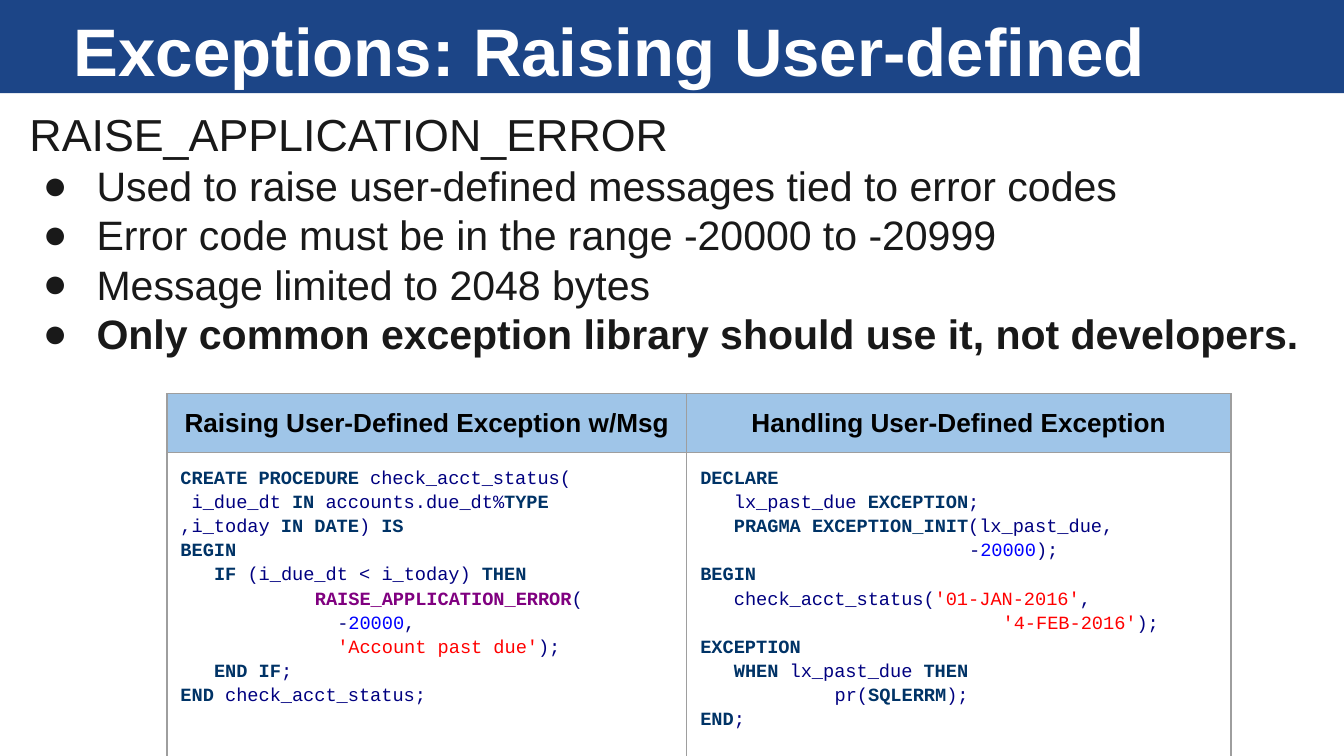
from dataclasses import dataclass

from lxml.etree import SubElement
from pptx import Presentation
from pptx.dml.color import RGBColor
from pptx.enum.shapes import MSO_SHAPE as Shape
from pptx.enum.text import MSO_ANCHOR as Anchor, PP_ALIGN as Align
from pptx.oxml.ns import qn
from pptx.util import Pt


@dataclass(frozen=True)
class Theme:
    sans: str = "Arial"
    mono: str = "Courier New"
    banner: str = "1C4587"
    header: str = "9FC5E8"
    white: str = "FFFFFF"
    black: str = "000000"
    body: str = "191919"
    border: str = "9E9E9E"
    plain: str = "000080"
    keyword: str = "003366"
    number: str = "0000FF"
    string: str = "FF0000"
    builtin: str = "800080"
    title_size: float = 36
    lead_size: float = 24
    bullet_size: float = 22
    header_size: float = 14
    code_size: float = 10


@dataclass(frozen=True)
class CodeLine:
    text: str
    indent: float = 0


@dataclass(frozen=True)
class Panel:
    heading: str
    width: float
    lines: tuple[CodeLine, ...]


THEME = Theme()
INSET = 7.2
STEP = 18
KEYWORDS = set(
    "CREATE PROCEDURE IN TYPE DATE IS BEGIN IF THEN END DECLARE EXCEPTION "
    "PRAGMA EXCEPTION_INIT WHEN SQLERRM".split()
)
BULLETS = (
    "Used to raise user-defined messages tied to error codes",
    "Error code must be in the range -20000 to -20999",
    "Message limited to 2048 bytes",
    "Only common exception library should use it, not developers.",
)
PANELS = (
    Panel("Raising User-Defined Exception w/Msg", 278.5, (
        CodeLine("CREATE| |PROCEDURE| check_acct_status("),
        CodeLine("i_due_dt |IN| accounts.due_dt%|TYPE", 6),
        CodeLine(",i_today |IN| |DATE|) |IS"),
        CodeLine("BEGIN"),
        CodeLine("IF| (i_due_dt < i_today) |THEN", STEP),
        CodeLine("RAISE_APPLICATION_ERROR|(", 72),
        CodeLine("-|20000|,", 84),
        CodeLine("'Account past due'|);", 84),
        CodeLine("END| |IF|;", STEP),
        CodeLine("END| check_acct_status;"),
    )),
    Panel("Handling User-Defined Exception", 291.5, (
        CodeLine("DECLARE"),
        CodeLine("lx_past_due |EXCEPTION|;", STEP),
        CodeLine("PRAGMA| |EXCEPTION_INIT|(lx_past_due,", STEP),
        CodeLine("-|20000|);", 144),
        CodeLine("BEGIN"),
        CodeLine("check_acct_status(|'01-JAN-2016'|,", STEP),
        CodeLine("'4-FEB-2016'|);", 162),
        CodeLine("EXCEPTION"),
        CodeLine("WHEN| lx_past_due |THEN", STEP),
        CodeLine("pr(|SQLERRM|);", 72),
        CodeLine("END|;"),
    )),
)


def rgb(value: str) -> RGBColor:
    return RGBColor.from_string(value)


def add_text(p, text: str, *, size: float, color: str,
             font: str = THEME.sans, bold: bool = False) -> None:
    r = p.add_run()
    r.text = text
    r.font.name = font
    r.font.size = Pt(size)
    r.font.bold = bold
    r.font.color.rgb = rgb(color)


def indent(p, left: float, first: float = 0) -> None:
    pPr = p._p.get_or_add_pPr()
    pPr.set("marL", str(Pt(left)))
    pPr.set("indent", str(Pt(first)))


def add_bullet(p) -> None:
    indent(p, 36, -28.8)
    pPr = p._p.get_or_add_pPr()
    clr = SubElement(pPr, qn("a:buClr"))
    SubElement(clr, qn("a:srgbClr"), val=THEME.body)
    SubElement(pPr, qn("a:buFont"), typeface=THEME.sans)
    SubElement(pPr, qn("a:buChar"), char="●")


def add_box(s, left: float, top: float, width: float, height: float, anchor):
    tf = s.shapes.add_textbox(Pt(left), Pt(top), Pt(width), Pt(height)).text_frame
    tf.word_wrap = True
    tf.vertical_anchor = anchor
    tf.margin_left = tf.margin_right = Pt(INSET)
    tf.margin_top = tf.margin_bottom = Pt(INSET)
    return tf


def token_style(token: str) -> tuple[str, bool]:
    if token in KEYWORDS:
        return THEME.keyword, True
    if token == "RAISE_APPLICATION_ERROR":
        return THEME.builtin, True
    if token.isdigit():
        return THEME.number, False
    if token.startswith("'"):
        return THEME.string, False
    return THEME.plain, False


def write_code(tf, lines: tuple[CodeLine, ...]) -> None:
    for i, line in enumerate(lines):
        p = tf.add_paragraph() if i else tf.paragraphs[0]
        p.line_spacing = 1.15
        indent(p, line.indent)
        for token in line.text.split("|"):
            color, bold = token_style(token)
            add_text(p, token, size=THEME.code_size, color=color,
                     font=THEME.mono, bold=bold)


def style_cell(cell, fill: str) -> None:
    cell.margin_left = cell.margin_right = Pt(INSET)
    cell.margin_top = cell.margin_bottom = Pt(INSET)
    tcPr = cell._tc.get_or_add_tcPr()
    for side in ("lnL", "lnR", "lnT", "lnB"):
        ln = SubElement(tcPr, qn(f"a:{side}"), w=str(Pt(0.75)))
        solid = SubElement(ln, qn("a:solidFill"))
        SubElement(solid, qn("a:srgbClr"), val=THEME.border)
    cell.fill.solid()
    cell.fill.fore_color.rgb = rgb(fill)


def add_code_table(s, left: float, top: float, panels: tuple[Panel, ...]) -> None:
    heights = (30, 157)
    width = sum(panel.width for panel in panels)
    table = s.shapes.add_table(2, len(panels), Pt(left), Pt(top),
                               Pt(width), Pt(sum(heights))).table
    table.first_row = table.horz_banding = False
    for row, height in zip(table.rows, heights):
        row.height = Pt(height)
    for col, panel in enumerate(panels):
        table.columns[col].width = Pt(panel.width)
        head, code = table.cell(0, col), table.cell(1, col)
        style_cell(head, THEME.header)
        style_cell(code, THEME.white)
        head.vertical_anchor = Anchor.MIDDLE
        p = head.text_frame.paragraphs[0]
        p.alignment = Align.CENTER
        add_text(p, panel.heading, size=THEME.header_size,
                 color=THEME.black, bold=True)
        write_code(code.text_frame, panel.lines)


def main() -> None:
    prs = Presentation()
    prs.slide_width, prs.slide_height = Pt(720), Pt(405)
    s = prs.slides.add_slide(prs.slide_layouts[6])

    banner = s.shapes.add_shape(Shape.RECTANGLE, 0, 0, Pt(720), Pt(50))
    banner.shadow.inherit = False
    banner.fill.solid()
    banner.fill.fore_color.rgb = rgb(THEME.banner)
    banner.line.fill.background()

    title = add_box(s, 32.5, 3, 648, 47, Anchor.MIDDLE)
    add_text(title.paragraphs[0], "Exceptions: Raising User-defined",
             size=THEME.title_size, color=THEME.white, bold=True)

    body = add_box(s, 8.7, 50, 703, 151, Anchor.TOP)
    add_text(body.paragraphs[0], "RAISE_APPLICATION_ERROR",
             size=THEME.lead_size, color=THEME.body)
    for text in BULLETS:
        p = body.add_paragraph()
        add_bullet(p)
        add_text(p, text, size=THEME.bullet_size, color=THEME.body,
                 bold=text == BULLETS[-1])

    add_code_table(s, 89.5, 211, PANELS)
    prs.save("out.pptx")


if __name__ == "__main__":
    main()
